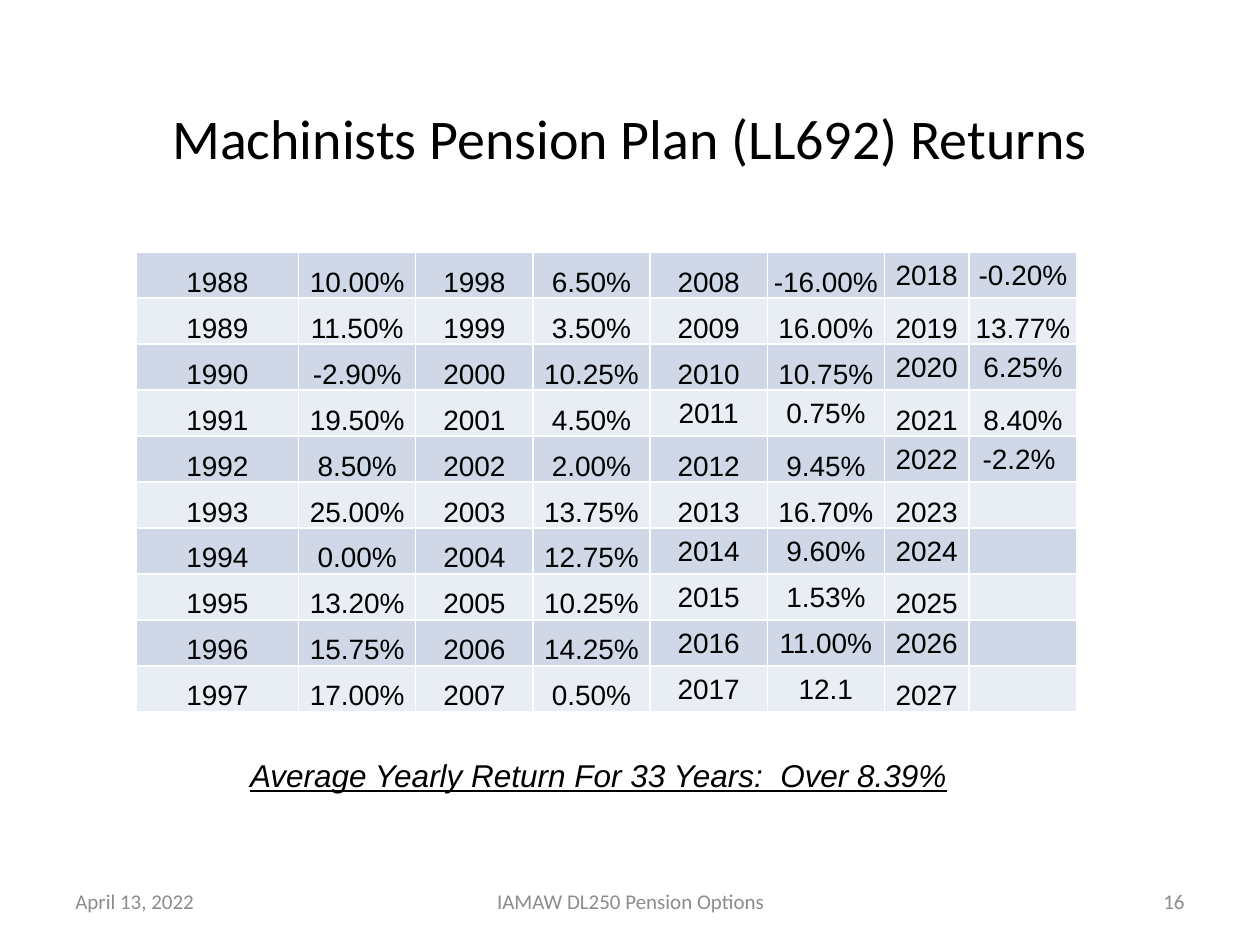
from pptx import Presentation
from pptx.dml.color import RGBColor as RGB
from pptx.enum.text import MSO_ANCHOR as ANCHOR, PP_ALIGN as ALIGN
from pptx.util import Inches, Pt

THEME = {
    "ink": RGB.from_string("000000"),
    "muted": RGB.from_string("8C8C8C"),
    "bands": [RGB.from_string("D0D8E8"), RGB.from_string("E9EDF4")],
    "title": Pt(32),
    "average": Pt(18),
    "cell": Pt(16),
    "footer": Pt(12),
}


def write(tf, text, align, **font):
    p = tf.paragraphs[0]
    p.alignment = align
    r = p.add_run()
    r.text = text
    r.font.color.rgb = font.pop("color")
    for name, value in font.items():
        setattr(r.font, name, value)


prs = Presentation()
prs.slide_width, prs.slide_height = Inches(10), Inches(7.5)
s = prs.slides.add_slide(prs.slide_layouts[6])

title = dict(name="Calibri", size=THEME["title"], color=THEME["ink"])
footer = dict(name="Calibri", size=THEME["footer"], color=THEME["muted"])
average = dict(name="Arial", size=THEME["average"], color=THEME["ink"],
               italic=True, underline=True)
texts = [
    ("Machinists Pension Plan (LL692) Returns", (0.5, 0.46, 9, 1.25), ALIGN.CENTER, ANCHOR.MIDDLE, title),
    ("April 13, 2022", (0.5, 6.95, 2.33, 0.4), ALIGN.LEFT, ANCHOR.MIDDLE, footer),
    ("IAMAW DL250 Pension Options", (3.42, 6.95, 3.17, 0.4), ALIGN.CENTER, ANCHOR.MIDDLE, footer),
    ("16", (7.17, 6.95, 2.33, 0.4), ALIGN.RIGHT, ANCHOR.MIDDLE, footer),
    ("Average Yearly Return For 33 Years:  Over 8.39%", (0.5, 5.95, 8.5, 0.71), ALIGN.CENTER, ANCHOR.TOP, average),
]
for text, box, align, anchor, font in texts:
    tf = s.shapes.add_textbox(*map(Inches, box)).text_frame
    tf.word_wrap = True
    tf.vertical_anchor = anchor
    write(tf, text, align, **font)

returns = {
    1988: ["10.00%", "11.50%", "-2.90%", "19.50%", "8.50%",
           "25.00%", "0.00%", "13.20%", "15.75%", "17.00%"],
    1998: ["6.50%", "3.50%", "10.25%", "4.50%", "2.00%",
           "13.75%", "12.75%", "10.25%", "14.25%", "0.50%"],
    2008: ["-16.00%", "16.00%", "10.75%", "0.75%", "9.45%",
           "16.70%", "9.60%", "1.53%", "11.00%", "12.1"],
    2018: ["-0.20%", "13.77%", "6.25%", "8.40%", "-2.2% ", "", "", "", "", ""],
}
centred_years = {2011, 2014, 2015, 2016, 2017, 2018, 2020, 2022, 2024, 2026}
widths = [1.29, 0.93, 0.93, 0.93, 0.93, 0.93, 0.67, 0.86]
margins = {"margin_left": 0.01, "margin_top": 0.01, "margin_right": 0.01, "margin_bottom": 0}

table = s.shapes.add_table(10, len(widths), Inches(1.08), Inches(2),
                           Inches(sum(widths)), Inches(3.65)).table
table.first_row = table.horz_banding = False
for column, width in zip(table.columns, widths):
    column.width = Inches(width)

for decade, (start, values) in enumerate(returns.items()):
    for row, value in enumerate(values):
        year = start + row
        for offset, text in enumerate((str(year), value)):
            cell = table.cell(row, 2 * decade + offset)
            cell.fill.solid()
            cell.fill.fore_color.rgb = THEME["bands"][row % 2]
            cell.vertical_anchor = ANCHOR.MIDDLE if year in centred_years else ANCHOR.BOTTOM
            for side, inches in margins.items():
                setattr(cell, side, Inches(inches))
            if text:
                write(cell.text_frame, text, ALIGN.CENTER,
                      name="Arial", size=THEME["cell"], color=THEME["ink"])

prs.save("out.pptx")
